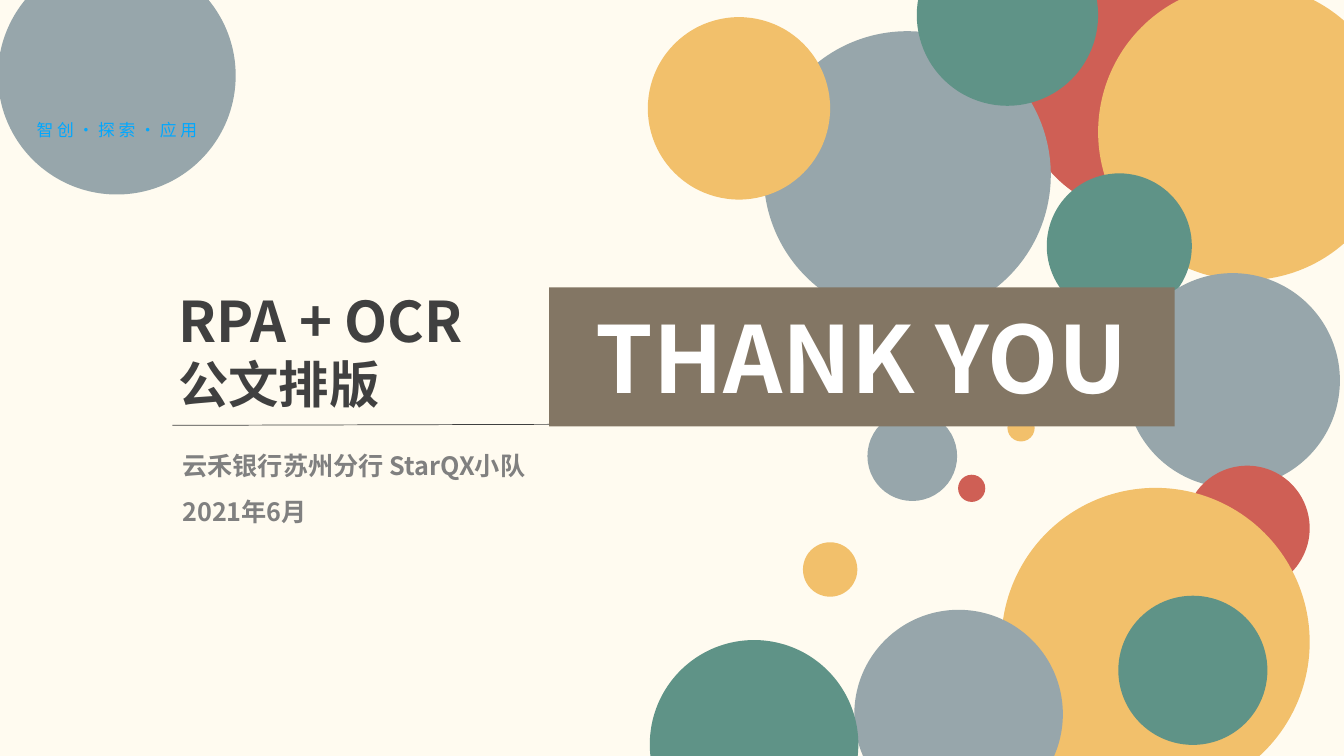
from lxml import etree
from pptx import Presentation
from pptx.dml import color
from pptx.enum import shapes, text
from pptx.oxml import ns
from pptx import util as u

EMU_PER_PX = 9144
FONT = "Noto Sans CJK SC"
CREAM, BROWN, WHITE = "FFFBF0", "837664", "FFFFFF"
RED, YELLOW, GREEN, GREY = "CF5F55", "F2C06B", "5F9387", "97A6AB"
DARK, MUTED = "404040", "808080"
CYAN, VIOLET = "01A8FF", "D460FF"

CIRCLES = [
    (1012, -34, 246, RED),
    (1090, -16, 294, YELLOW),
    (1039, 172, 144, GREEN),
    (1117, 271, 213, GREY),
    (758, 31, 285, GREY),
    (910, -75, 180, GREEN),
    (1176, 462, 124, RED),
    (994, 484, 306, YELLOW),
    (1110, 591, 148, GREEN),
    (848, 605, 207, GREY),
    (645, 635, 207, GREEN),
    (861, 408, 89, GREY),
    (951, 471, 27, RED),
    (1000, 411, 27, YELLOW),
    (797, 538, 54, YELLOW),
    (643, 17, 181, YELLOW),
    (-2, -43, 236, GREY),
]
SLOGAN = [("智 创 · 探 索 · 应 用", 12)]
BANNER = [("THANK YOU", 66)]
TOPIC = [("RPA + OCR", 40), ("公文排版", 36)]
TEAM = [("云禾银行苏州分行 StarQX小队", 18), ("2021年6月", 18)]


def px(value):
    return u.Emu(value * EMU_PER_PX)


def rgb(value):
    return color.RGBColor.from_string(value)


def paint(shape, fill):
    shape.fill.solid()
    shape.fill.fore_color.rgb = rgb(fill)


def place(shape, left, top, width, height):
    shape.left, shape.top = px(left), px(top)
    shape.width, shape.height = px(width), px(height)


def write(shape, lines, ink, align, anchor=text.MSO_ANCHOR.TOP, bold=True, spacing=1.0):
    frame = shape.text_frame
    frame.text = "\n".join(line for line, size in lines)
    frame.word_wrap = True
    frame.auto_size = text.MSO_AUTO_SIZE.NONE
    frame.vertical_anchor = anchor
    for para, (line, size) in zip(frame.paragraphs, lines):
        para.alignment = align
        para.line_spacing = spacing
        para.space_before = u.Pt(0)
        for span in para.runs:
            span.font.size = u.Pt(size)
            span.font.bold = bold
            span.font.color.rgb = rgb(ink)
            span.font.name = FONT
            latin = span.font._element.find(ns.qn("a:latin"))
            east_asian = etree.Element(ns.qn("a:ea"), typeface=FONT)
            latin.addnext(east_asian)


deck = Presentation()
deck.slide_width, deck.slide_height = px(1334), px(750)
page = deck.slides.add_slide(deck.slide_layouts[0])
page.background.fill.solid()
page.background.fill.fore_color.rgb = rgb(CREAM)
banner, team = page.placeholders

for left, top, size, fill in CIRCLES:
    circle = page.shapes.add_shape(
        shapes.MSO_SHAPE.OVAL, px(left), px(top), px(size), px(size))
    paint(circle, fill)
    circle.line.fill.background()
    circle.shadow.inherit = False

slogan = page.shapes.add_textbox(px(-1), px(114), px(234), px(30))
write(slogan, SLOGAN, CYAN, text.PP_ALIGN.CENTER, bold=False)
slogan_fill = slogan.text_frame.paragraphs[0].runs[0].font.fill
slogan_fill.gradient()
slogan_fill.gradient_angle = 315
for stop, shade in zip(slogan_fill.gradient_stops, (CYAN, VIOLET)):
    stop.color.rgb = rgb(shade)

page.shapes._spTree.append(banner._element)
place(banner, 545, 285, 621, 138)
paint(banner, BROWN)
write(banner, BANNER, WHITE, text.PP_ALIGN.CENTER, text.MSO_ANCHOR.MIDDLE)

topic = page.shapes.add_textbox(px(167), px(279), px(435), px(138))
write(topic, TOPIC, DARK, text.PP_ALIGN.LEFT)

rule = page.shapes.add_connector(
    shapes.MSO_CONNECTOR.STRAIGHT, px(171), px(422), px(545), px(421))
rule.line.color.rgb = rgb(DARK)
rule.line.width = u.Pt(0.5)
etree.SubElement(rule._element.spPr, ns.qn("a:effectLst"))

page.shapes._spTree.append(team._element)
place(team, 171, 427, 411, 96)
write(team, TEAM, MUTED, text.PP_ALIGN.LEFT, spacing=1.5)

deck.save("out.pptx")
